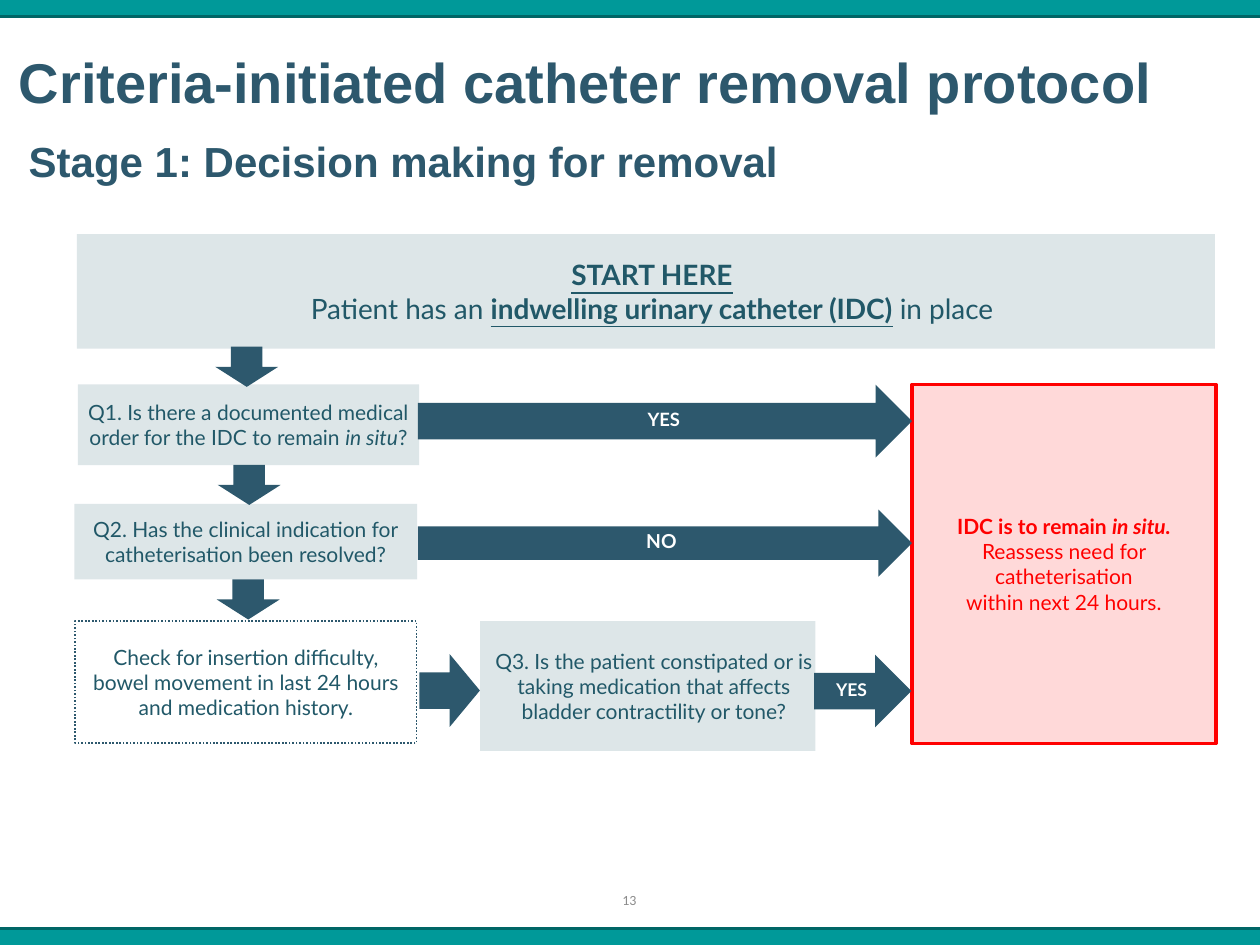
import dataclasses

import lxml.etree
import pptx
import pptx.dml.color
import pptx.enum.dml
import pptx.enum.shapes
import pptx.enum.text
import pptx.oxml.ns
import pptx.util

Cm = pptx.util.Cm
SHAPES = pptx.enum.shapes.MSO_SHAPE


@dataclasses.dataclass(frozen=True)
class Theme:
    """Hold the colours, fonts and type sizes of the slide."""
    slate: str = "2D586D"
    ink: str = "215868"
    alert: str = "FF0000"
    white: str = "FFFFFF"
    band: str = "009999"
    band_edge: str = "006666"
    grey: str = "8C8C8C"
    heading_font: str = "Arial"
    body_font: str = "Lato"
    number_font: str = "Calibri"
    title_size: float = 32
    subtitle_size: float = 24
    start_size: float = 16
    body_size: float = 12
    no_size: float = 11
    long_yes_size: float = 10.5
    short_yes_size: float = 10
    number_size: float = 8
    tint_percent: int = 15


THEME = Theme()
BOLD = {"bold": True}
ITALIC = {"italic": True}
KEY = {"bold": True, "underline": True}
INSETS = (0.25, 0.13, 0.25, 0.13)
OPEN_RIGHT = (0.25, 0.13, 0, 0.13)


def rgb(value):
    """Return a colour object for a hex value."""
    return pptx.dml.color.RGBColor.from_string(value)


def style(name, size, color, **extra):
    """Return the format values of a run."""
    return {"name": name, "size": pptx.util.Pt(size), "color": color, **extra}


def write_text(shape, paragraphs, base, insets=INSETS, centred=True):
    """Fill a shape with paragraphs made of (text, format) runs."""
    frame = shape.text_frame
    settings = dict(zip(("margin_left", "margin_top", "margin_right", "margin_bottom"),
                        (Cm(inset) for inset in insets)))
    settings.update(word_wrap=True, vertical_anchor=pptx.enum.text.MSO_ANCHOR.MIDDLE)
    for name, value in settings.items():
        setattr(frame, name, value)
    alignment = pptx.enum.text.PP_ALIGN.CENTER if centred else pptx.enum.text.PP_ALIGN.LEFT
    for index, runs in enumerate(paragraphs):
        paragraph = frame.add_paragraph() if index else frame.paragraphs[0]
        paragraph.alignment = alignment
        for text, changes in runs:
            run = paragraph.add_run()
            run.text = text
            for name, value in {**base, **changes}.items():
                if name == "color":
                    run.font.color.rgb = rgb(value)
                else:
                    setattr(run.font, name, value)


def add_label(slide, box, text, base, centred=True):
    """Add a text box with one line of text."""
    shape = slide.shapes.add_textbox(*map(Cm, box))
    write_text(shape, [[(text, {})]], base, centred=centred)


def add_block(slide, kind, box, fill, tinted=False, line=None):
    """Add a filled preset shape with an optional (colour, width, dash) line."""
    shape = slide.shapes.add_shape(kind, *map(Cm, box))
    shape.shadow.inherit = False
    shape.fill.solid()
    shape.fill.fore_color.rgb = rgb(fill)
    if tinted:
        color = shape.element.spPr.find(".//" + pptx.oxml.ns.qn("a:srgbClr"))
        lxml.etree.SubElement(color, pptx.oxml.ns.qn("a:alpha"), val=str(THEME.tint_percent * 1000))
    if line:
        line_color, width, dash = line
        shape.line.color.rgb = rgb(line_color)
        shape.line.width = pptx.util.Pt(width)
        if dash:
            shape.line.dash_style = dash
    else:
        shape.line.fill.background()
    return shape


def add_arrow(slide, box, rotation=0):
    """Add a flow arrow that points down before rotation."""
    add_block(slide, SHAPES.DOWN_ARROW, box, THEME.slate).rotation = rotation


def add_step(slide, box, paragraphs, base, insets=INSETS, fill=THEME.ink, tinted=True, line=None):
    """Add a rectangular flow step with text."""
    shape = add_block(slide, SHAPES.RECTANGLE, box, fill, tinted, line)
    write_text(shape, paragraphs, base, insets)


def add_band(slide, top, edge):
    """Add a full-width band with a dark edge line."""
    add_block(slide, SHAPES.RECTANGLE, (0, top, 25.4, 0.33), THEME.band)
    connector = slide.shapes.add_connector(
        pptx.enum.shapes.MSO_CONNECTOR.STRAIGHT, Cm(0), Cm(edge), Cm(25.4), Cm(edge))
    connector.line.color.rgb = rgb(THEME.band_edge)
    connector.line.width = pptx.util.Pt(2)
    lxml.etree.SubElement(connector.element.spPr, pptx.oxml.ns.qn("a:effectLst"))


def add_headings(slide):
    """Add the title, the subtitle and the slide number."""
    headings = [
        ((0.13, 0.74, 26.59, 1.8), "Criteria-initiated catheter removal protocol", THEME.title_size),
        ((0.33, 2.34, 25.37, 1.8), "Stage 1: Decision making for removal", THEME.subtitle_size),
    ]
    for box, text, size in headings:
        base = style(THEME.heading_font, size, THEME.slate, bold=True)
        add_label(slide, box, text, base, centred=False)
    add_label(slide, (9.73, 17.63, 5.92, 1.02), "13",
              style(THEME.number_font, THEME.number_size, THEME.grey))


def add_arrows(slide):
    """Add the down arrows, the right arrows and their answers."""
    for left, top in ((4.34, 6.99), (4.39, 9.37), (4.37, 11.68)):
        add_arrow(slide, (left, top, 1.27, 0.81))
    for box in ((12.67, 3.51, 1.47, 9.96), (12.73, 5.97, 1.35, 9.96),
                (8.33, 13.31, 1.47, 1.22), (16.66, 12.95, 1.47, 1.96)):
        add_arrow(slide, box, 270)
    answers = [
        ((12.34, 7.98, 2.08, 0.94), "YES", THEME.long_yes_size),
        ((12.47, 10.34, 1.73, 1.14), "NO", THEME.no_size),
        ((16.43, 13.44, 1.47, 0.94), "YES", THEME.short_yes_size),
    ]
    for box, text, size in answers:
        add_label(slide, box, text, style(THEME.body_font, size, THEME.white, bold=True))


def add_steps(slide):
    """Add the start, question, check and outcome boxes."""
    body = style(THEME.body_font, THEME.body_size, THEME.ink)
    add_step(slide, (1.55, 4.72, 22.94, 2.31), [
        [("START HERE", KEY)],
        [("Patient has an ", {}), ("indwelling urinary catheter (IDC)", KEY), (" in place", {})],
    ], style(THEME.body_font, THEME.start_size, THEME.ink), OPEN_RIGHT)
    add_step(slide, (1.57, 7.75, 6.88, 1.63), [[
        ("Q1. Is there a documented medical order for the IDC to remain ", {}),
        ("in situ", ITALIC), ("?", {})]], body, (0, 0, 0, 0))
    add_step(slide, (1.5, 10.16, 6.91, 1.52), [[
        ("Q2. Has the clinical indication for catheterisation been resolved?", {})]],
        body, (0.1, 0, 0.1, 0))
    add_step(slide, (1.52, 12.52, 6.88, 2.46), [[
        ("Check for insertion difficulty, bowel movement in last 24 hours and medication history.", {})]],
        body, fill=THEME.white, tinted=False,
        line=(THEME.slate, 1, pptx.enum.dml.MSO_LINE.ROUND_DOT))
    add_step(slide, (9.68, 12.52, 6.76, 2.62), [[
        ("Q3. Is the patient constipated or is taking medication that affects "
         "bladder contractility or tone?", {})]], body, OPEN_RIGHT)
    add_step(slide, (18.39, 7.75, 6.12, 7.24), [
        [("IDC is to remain ", BOLD), ("in situ.", {**BOLD, **ITALIC})],
        [("Reassess need for catheterisation", {})],
        [("within next 24 hours.", {})],
    ], {**body, "color": THEME.alert}, fill=THEME.alert, line=(THEME.alert, 2, None))


def main():
    """Build and save the slide."""
    presentation = pptx.Presentation()
    presentation.slide_width, presentation.slide_height = Cm(25.4), Cm(19.05)
    slide = presentation.slides.add_slide(presentation.slide_layouts[6])
    add_band(slide, 0, 0.33)
    add_band(slide, 18.72, 18.72)
    add_headings(slide)
    add_steps(slide)
    add_arrows(slide)
    presentation.save("out.pptx")


if __name__ == "__main__":
    main()
